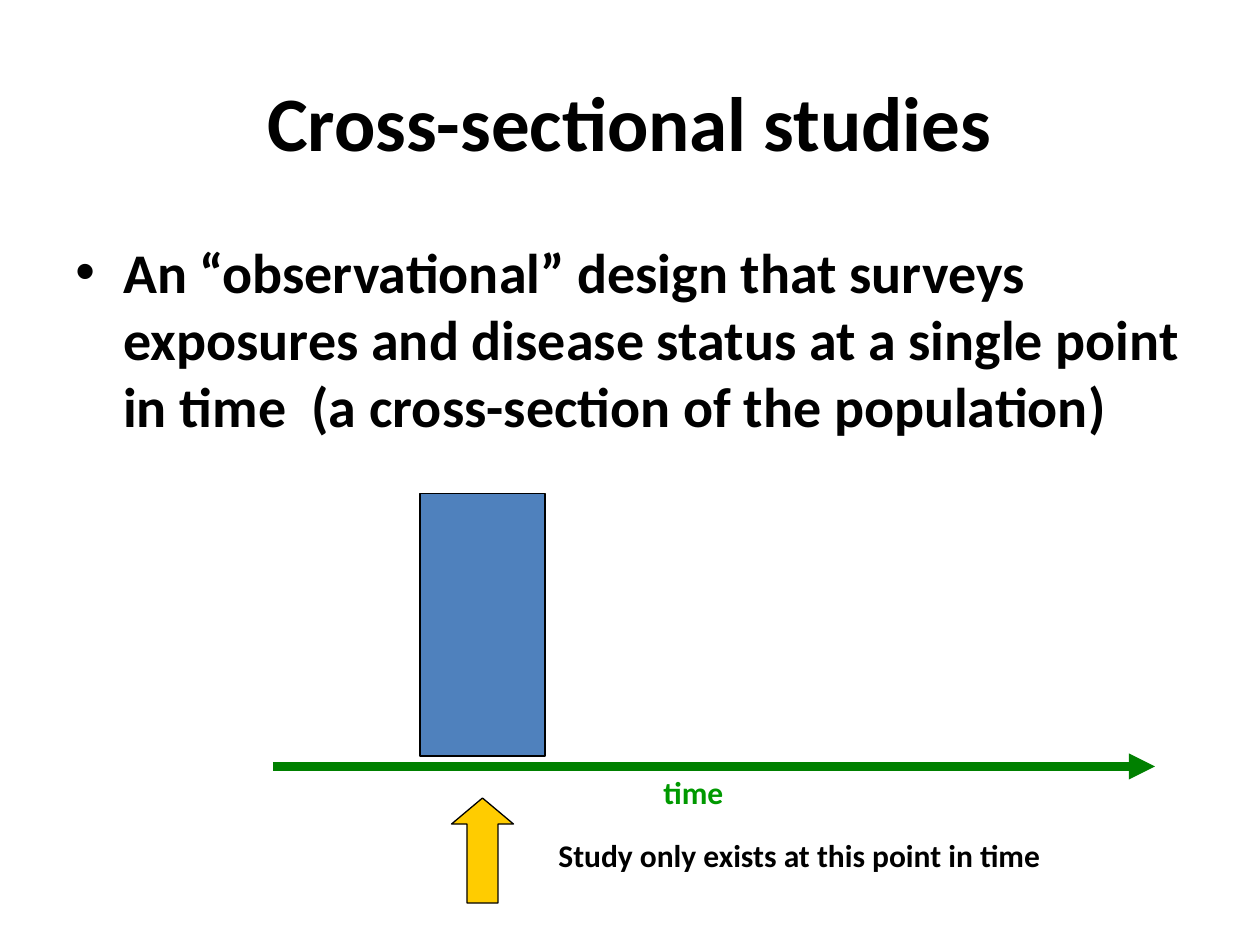
"""Build a slide that explains cross-sectional studies with a timeline."""
from lxml.etree import SubElement
from pptx import Presentation
from pptx.dml.color import RGBColor
from pptx.enum.shapes import MSO_CONNECTOR as CONN, MSO_SHAPE as SHAPE
from pptx.enum.text import MSO_ANCHOR as ANCHOR, PP_ALIGN as ALIGN
from pptx.oxml.ns import qn
from pptx.util import Inches, Pt

rgb = RGBColor.from_string
prs = Presentation()
prs.slide_width, prs.slide_height = Inches(10), Inches(7.5)
s = prs.slides.add_slide(prs.slide_layouts[6])
COLS, ROWS = 120, 90


def grid(x, y, w, h):
    cw, rh = prs.slide_width / COLS, prs.slide_height / ROWS
    return round(x * cw), round(y * rh), round(w * cw), round(h * rh)


def add_text(text, box, size=18, color="000000", align=ALIGN.LEFT,
             anchor=ANCHOR.TOP, bullet=None):
    tf = s.shapes.add_textbox(*grid(*box)).text_frame
    tf.word_wrap, tf.vertical_anchor = True, anchor
    p = tf.paragraphs[0]
    p.alignment = align
    if bullet:
        pPr = p._p.get_or_add_pPr()
        pPr.set("marL", str(Inches(0.38)))
        pPr.set("indent", str(-Inches(0.38)))
        SubElement(pPr, qn("a:buFont"), typeface="Arial")
        SubElement(pPr, qn("a:buChar"), char=bullet)
    r = p.add_run()
    r.text = text
    r.font.name, r.font.size, r.font.bold = "Calibri", Pt(size), True
    r.font.color.rgb = rgb(color)


add_text("Cross-sectional studies", (9, 4, 102, 15), size=44,
         align=ALIGN.CENTER, anchor=ANCHOR.MIDDLE)
add_text("An “observational” design that surveys exposures and disease status "
         "at a single point in time  (a cross-section of the population)",
         (6, 22, 110, 21), size=32, bullet="•")

for kind, box, fill, width in [
    (SHAPE.RECTANGLE, (40, 47, 11.9, 25), "4F81BD", 1),
    (SHAPE.UP_ARROW, (43, 76, 5.9, 10), "FFCC00", 0.75),
]:
    sp = s.shapes.add_shape(kind, *grid(*box))
    sp.shadow.inherit = False
    sp.fill.solid()
    sp.fill.fore_color.rgb = rgb(fill)
    sp.line.color.rgb = rgb("000000")
    sp.line.width = Pt(width)
sp.adjustments[0], sp.adjustments[1] = 0.5, 0.42

x, y, w, h = grid(26, 73, 84, 0)
axis = s.shapes.add_connector(CONN.STRAIGHT, x, y, x + w, y + h)
axis.line.color.rgb = rgb("008000")
axis.line.width = Pt(5)
SubElement(axis.line._get_or_add_ln(), qn("a:tailEnd"), type="triangle")
SubElement(axis._element.spPr, qn("a:effectLst"))

add_text("time", (62, 73, 10, 6), color="009900")
add_text("Study only exists at this point in time", (52, 79, 65.4, 6))

prs.save("out.pptx")
